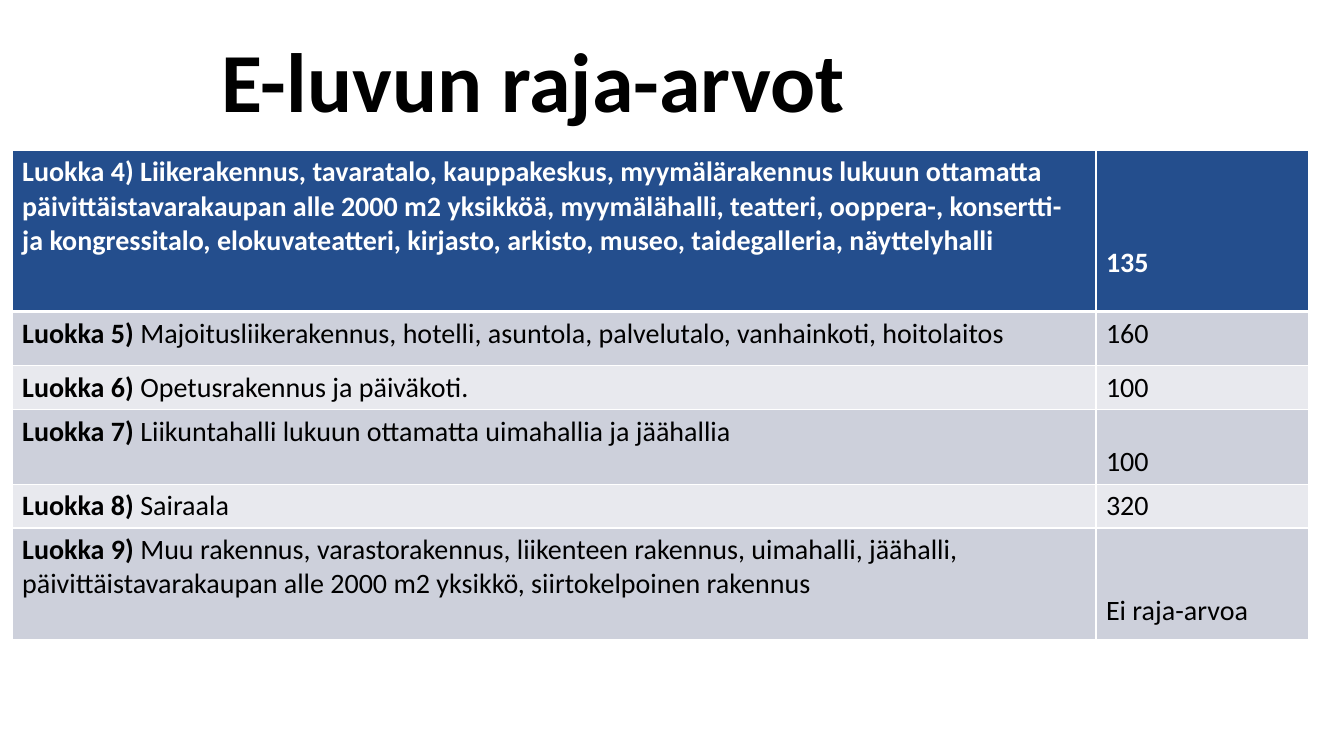
"""Build a slide with a table of E-value limits by building class."""
from lxml.etree import SubElement
from pptx import Presentation
from pptx.dml.color import RGBColor
from pptx.enum.text import MSO_ANCHOR
from pptx.oxml.ns import qn
from pptx.util import Inches, Pt


def paint(font, size, color, bold):
    font.name, font.size, font.bold = "Calibri", Pt(size), bold
    font.color.rgb = RGBColor.from_string(color)


def edge(cell, side, width):
    line = SubElement(cell._tc.get_or_add_tcPr(), qn(f"a:{side}"), w=str(Pt(width)))
    fill = SubElement(line, qn("a:solidFill"))
    SubElement(fill, qn("a:srgbClr"), val="FFFFFF")


deck = Presentation()
deck.slide_width, deck.slide_height = Inches(13.33), Inches(7.5)
slide = deck.slides.add_slide(deck.slide_layouts[6])

title = slide.shapes.add_textbox(Inches(2.1), 0, Inches(9.57), Inches(1.69))
frame = title.text_frame
frame.word_wrap = True
frame.vertical_anchor = MSO_ANCHOR.MIDDLE
frame.text = "E-luvun raja-arvot"
frame.paragraphs[0].line_spacing = 0.9
paint(frame.paragraphs[0].runs[0].font, 60, "000000", True)

# Each row: height, class, buildings, limit, lines the limit is lowered by
rows = [
    (1.6, "Luokka 4) ", "Liikerakennus, tavaratalo, kauppakeskus, myymälärakennus lukuun "
     "ottamatta päivittäistavarakaupan alle 2000 m2 yksikköä, myymälähalli, teatteri, "
     "ooppera-, konsertti- ja kongressitalo, elokuvateatteri, kirjasto, arkisto, museo, "
     "taidegalleria, näyttelyhalli", "135", 3),
    (0.54, "Luokka 5) ", "Majoitusliikerakennus, hotelli, asuntola, palvelutalo, "
     "vanhainkoti, hoitolaitos", "160", 0),
    (0.42, "Luokka 6) ", "Opetusrakennus ja päiväkoti.", "100", 0),
    (0.74, "Luokka 7) ", "Liikuntahalli lukuun ottamatta uimahallia ja jäähallia", "100", 1),
    (0.42, "Luokka 8) ", "Sairaala", "320", 0),
    (1.11, "Luokka 9) ", "Muu rakennus, varastorakennus, liikenteen rakennus, uimahalli, "
     "jäähalli, päivittäistavarakaupan alle 2000 m2 yksikkö, siirtokelpoinen rakennus",
     "Ei raja-arvoa", 2),
]
widths = [10.75, 2.11]
high = sum(row[0] for row in rows)
table = slide.shapes.add_table(len(rows), 2, Inches(0.12), Inches(1.49),
                               Inches(sum(widths)), Inches(high)).table
for col, width in zip(table.columns, widths):
    col.width = Inches(width)

for i, (height, label, kind, limit, drop) in enumerate(rows):
    table.rows[i].height = Inches(height)
    head = i == 0
    back = "244E8D" if head else ("E8E9EE", "CDD0DB")[i % 2]
    ink = "FFFFFF" if head else "000000"
    left, right = table.cell(i, 0), table.cell(i, 1)
    right.margin_top = Inches(0.05 + 0.3 * drop)
    for cell, parts in ((left, [(label, True), (kind, head)]), (right, [(limit, head)])):
        for side in ("lnL", "lnR", "lnT", "lnB"):
            thick = (i, side) in ((0, "lnB"), (1, "lnT"))
            edge(cell, side, 3 if thick else 1)
        cell.fill.solid()
        cell.fill.fore_color.rgb = RGBColor.from_string(back)
        para = cell.text_frame.paragraphs[0]
        for text, bold in parts:
            run = para.add_run()
            run.text = text
            paint(run.font, 20, ink, bold)

deck.save("out.pptx")
